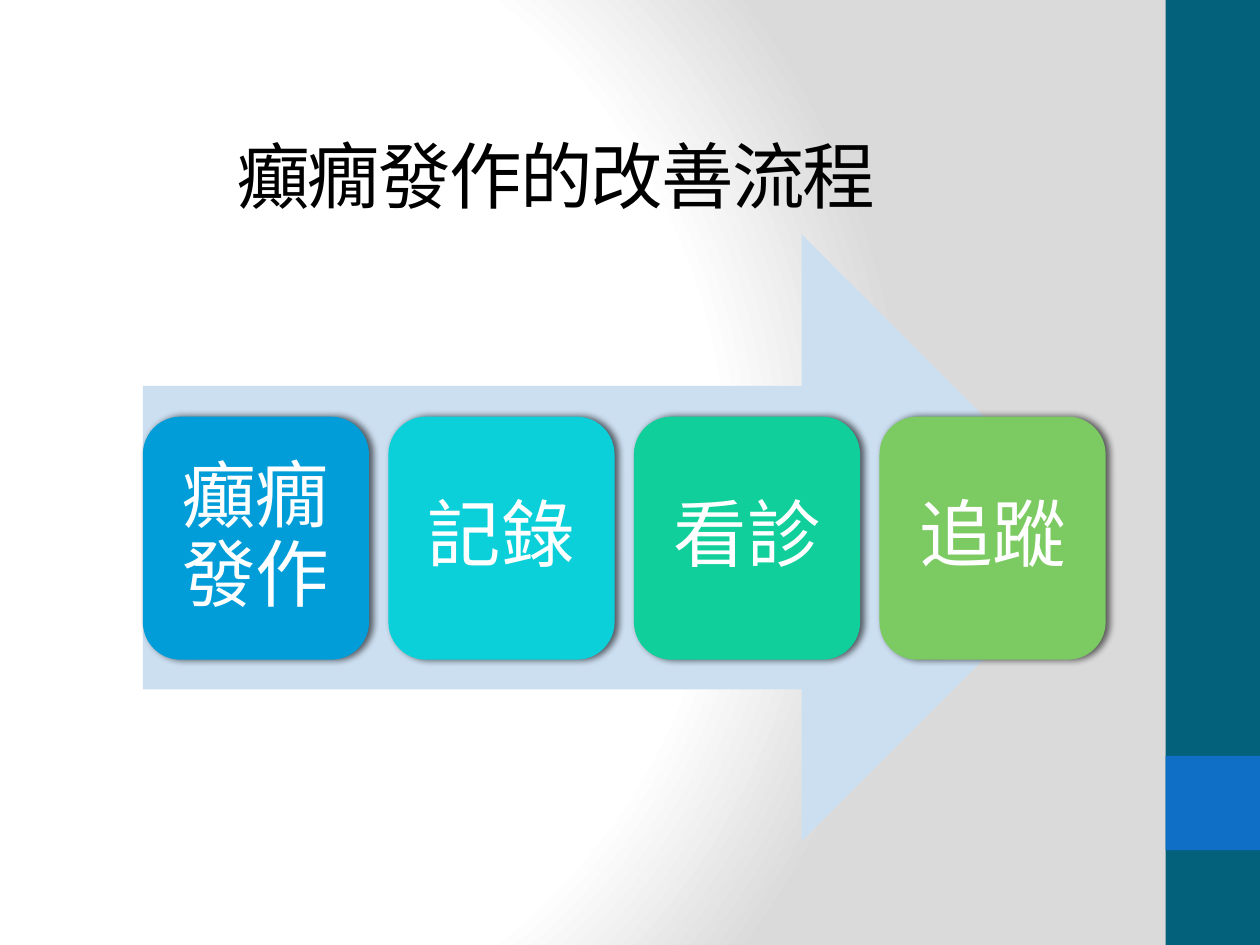
import pptx
import pptx.util
import pptx.oxml
import pptx.oxml.ns
import pptx.dml.color
import pptx.enum.shapes
import pptx.enum.text
from lxml import etree

Cm = pptx.util.Cm
Pt = pptx.util.Pt
RGBColor = pptx.dml.color.RGBColor
MSO_SHAPE = pptx.enum.shapes.MSO_SHAPE
PP_ALIGN = pptx.enum.text.PP_ALIGN
MSO_ANCHOR = pptx.enum.text.MSO_ANCHOR
namespaces = pptx.oxml.ns.nsdecls("a", "p")

COLORS = {
    "bar": "04617B", "accent": "0F6FC6", "arrow": "CCDFF1",
    "title": "000000", "step_text": "FFFFFF",
    "light": "FFFFFF", "shade": "DADADA",
}
STEPS = [("癲癇發作", "009DD9"), ("記錄", "0BD0D9"),
         ("看診", "10CF9B"), ("追蹤", "7CCA62")]


def add_block(kind, left, top, width, height, color):
    shape = slide.shapes.add_shape(kind, Cm(left), Cm(top), Cm(width), Cm(height))
    shape.shadow.inherit = False
    shape.fill.solid()
    shape.fill.fore_color.rgb = RGBColor.from_string(color)
    shape.line.fill.background()
    return shape


def set_text(shape, text, font_name, size, color, alignment, line_spacing):
    frame = shape.text_frame
    frame.text = text
    frame.word_wrap = True
    frame.vertical_anchor = MSO_ANCHOR.MIDDLE
    paragraph = frame.paragraphs[0]
    paragraph.alignment = alignment
    paragraph.line_spacing = line_spacing
    paragraph.font.name = font_name
    paragraph.font.size = Pt(size)
    paragraph.font.color.rgb = RGBColor.from_string(color)
    return frame


presentation = pptx.Presentation()
presentation.slide_width = Cm(25.4)
presentation.slide_height = Cm(19.05)
slide = presentation.slides.add_slide(presentation.slide_layouts[5])

# Background: circular gradient from light to shade
slide.background.fill.solid()
solid_fill = slide.element.find(".//" + pptx.oxml.ns.qn("p:bgPr"))[0]
stops = "".join(
    f'<a:gs pos="{position * 1000}"><a:srgbClr val="{COLORS[name]}"/></a:gs>'
    for position, name in [(0, "light"), (75, "light"), (100, "shade")])
solid_fill.getparent().replace(solid_fill, pptx.oxml.parse_xml(
    f'<a:gradFill {namespaces} rotWithShape="1"><a:gsLst>{stops}</a:gsLst>'
    '<a:path path="circle"><a:fillToRect l="20000" t="50000" r="100000" b="50000"/>'
    '</a:path></a:gradFill>'))

# Side bar with accent square
add_block(MSO_SHAPE.RECTANGLE, 23.5, 0, 1.9, 19.05, COLORS["bar"])
add_block(MSO_SHAPE.RECTANGLE, 23.5, 15.24, 1.9, 1.9, COLORS["accent"])

# Title
title = slide.shapes.title
title.left, title.top, title.width, title.height = Cm(0.7), Cm(2.52), Cm(22.86), Cm(2)
title_frame = set_text(title, "癲癇發作的改善流程", "Noto Sans CJK SC", 41.4,
                       COLORS["title"], PP_ALIGN.LEFT, 1.0)
title_frame.margin_left = Cm(4.08)
title_frame.paragraphs[0].font._element.set("spc", "-100")

# Arrow behind the steps
add_block(MSO_SHAPE.RIGHT_ARROW, 2.88, 4.72, 19.4, 12.24, COLORS["arrow"])

# Process steps
for index, (label, color) in enumerate(STEPS):
    step = add_block(MSO_SHAPE.ROUNDED_RECTANGLE, 2.88 + index * 4.95, 8.4, 4.56, 4.9, color)
    frame = set_text(step, label, "Calibri", 42, COLORS["step_text"], PP_ALIGN.CENTER, 0.9)
    frame.margin_left = frame.margin_right = Cm(0.43)
    frame.margin_top = frame.margin_bottom = Cm(0.43)
    effects = step._element.spPr.find(pptx.oxml.ns.qn("a:effectLst"))
    shadow = etree.SubElement(effects, pptx.oxml.ns.qn("a:outerShdw"),
                              blurRad=str(Pt(4)), dist=str(Pt(2)), dir="0", rotWithShape="0")
    shadow_color = etree.SubElement(shadow, pptx.oxml.ns.qn("a:srgbClr"), val="000000")
    etree.SubElement(shadow_color, pptx.oxml.ns.qn("a:alpha"), val="60000")

presentation.save("out.pptx")
